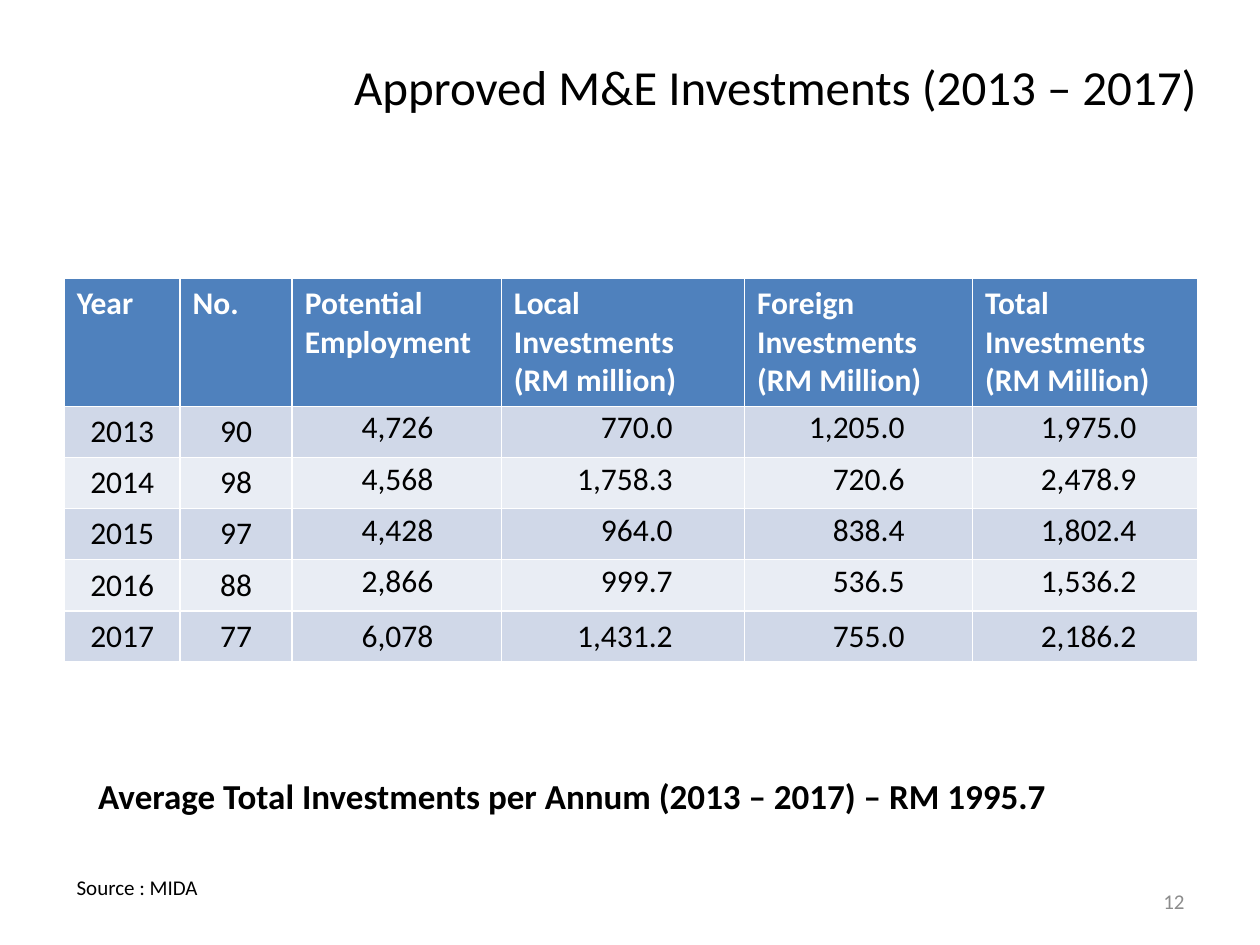
from pptx import Presentation
from pptx.dml.color import RGBColor
from pptx.enum.text import MSO_ANCHOR, PP_ALIGN
from pptx.util import Inches, Pt

BLACK = RGBColor(0x00, 0x00, 0x00)
WHITE = RGBColor(0xFF, 0xFF, 0xFF)
GREY = RGBColor(0x8C, 0x8C, 0x8C)
HEADER_BLUE = RGBColor(0x4F, 0x81, 0xBD)
BAND_DARK = RGBColor(0xD0, 0xD8, 0xE8)
BAND_LIGHT = RGBColor(0xE9, 0xED, 0xF4)

HEADERS = ["Year", "No.", "Potential Employment", "Local Investments (RM million)",
           "Foreign Investments (RM Million)", "Total Investments (RM Million)"]
INVESTMENTS = [
    ["2013", "90", "4,726", "770.0", "1,205.0", "1,975.0"],
    ["2014", "98", "4,568", "1,758.3", "720.6", "2,478.9"],
    ["2015", "97", "4,428", "964.0", "838.4", "1,802.4"],
    ["2016", "88", "2,866", "999.7", "536.5", "1,536.2"],
    ["2017", "77", "6,078", "1,431.2", "755.0", "2,186.2"],
]
COLUMN_WIDTHS = [0.92, 0.89, 1.66, 1.93, 1.81, 1.79]
RIGHT_MARGINS = [0.1, 0.1, 0.54, 0.57, 0.54, 0.49]


def format_paragraph(paragraph, size, color, bold=False, alignment=PP_ALIGN.LEFT):
    paragraph.alignment = alignment
    paragraph.font.name = "Calibri"
    paragraph.font.size = Pt(size)
    paragraph.font.bold = bold
    paragraph.font.color.rgb = color


presentation = Presentation()
presentation.slide_width = Inches(10)
presentation.slide_height = Inches(7.5)
slide = presentation.slides.add_slide(presentation.slide_layouts[5])

title = slide.shapes.title
title.left, title.top = Inches(2.71), Inches(0.4)
title.width, title.height = Inches(6.93), Inches(0.57)
title.text_frame.text = "Approved M&E Investments (2013 – 2017)"
title.text_frame.word_wrap = False
title.text_frame.vertical_anchor = MSO_ANCHOR.TOP
format_paragraph(title.text_frame.paragraphs[0], 28, BLACK)

table = slide.shapes.add_table(
    len(INVESTMENTS) + 1, len(HEADERS),
    Inches(0.51), Inches(2.21), Inches(9), Inches(3.02)).table
for column, width in zip(table.columns, COLUMN_WIDTHS):
    column.width = Inches(width)

for row_index, values in enumerate([HEADERS] + INVESTMENTS):
    is_header = row_index == 0
    table.rows[row_index].height = Inches(0.99 if is_header else 0.4)
    band = BAND_DARK if row_index % 2 else BAND_LIGHT
    for column_index, value in enumerate(values):
        cell = table.cell(row_index, column_index)
        cell.text = value
        cell.fill.solid()
        cell.fill.fore_color.rgb = HEADER_BLUE if is_header else band
        paragraph = cell.text_frame.paragraphs[0]
        if is_header:
            format_paragraph(paragraph, 18, WHITE, bold=True)
        elif column_index < 2:
            format_paragraph(paragraph, 18, BLACK, alignment=PP_ALIGN.CENTER)
        else:
            format_paragraph(paragraph, 18, BLACK, alignment=PP_ALIGN.RIGHT)
            cell.margin_right = Inches(RIGHT_MARGINS[column_index])
            if row_index < len(INVESTMENTS):
                cell.margin_top = Inches(0.02)

CAPTIONS = [
    ("Average Total Investments per Annum (2013 – 2017) – RM 1995.7",
     0.68, 6.1, 7.81, 0.44, 20, BLACK, True, PP_ALIGN.LEFT, MSO_ANCHOR.TOP),
    ("Source : MIDA",
     0.51, 6.89, 4.06, 0.3, 12, BLACK, False, PP_ALIGN.LEFT, MSO_ANCHOR.TOP),
    ("12",
     7.17, 6.95, 2.33, 0.4, 12, GREY, False, PP_ALIGN.RIGHT, MSO_ANCHOR.MIDDLE),
]
for text, left, top, width, height, size, color, bold, alignment, anchor in CAPTIONS:
    text_box = slide.shapes.add_textbox(Inches(left), Inches(top), Inches(width), Inches(height))
    text_frame = text_box.text_frame
    text_frame.word_wrap = True
    text_frame.vertical_anchor = anchor
    text_frame.text = text
    format_paragraph(text_frame.paragraphs[0], size, color, bold, alignment)

presentation.save("out.pptx")
